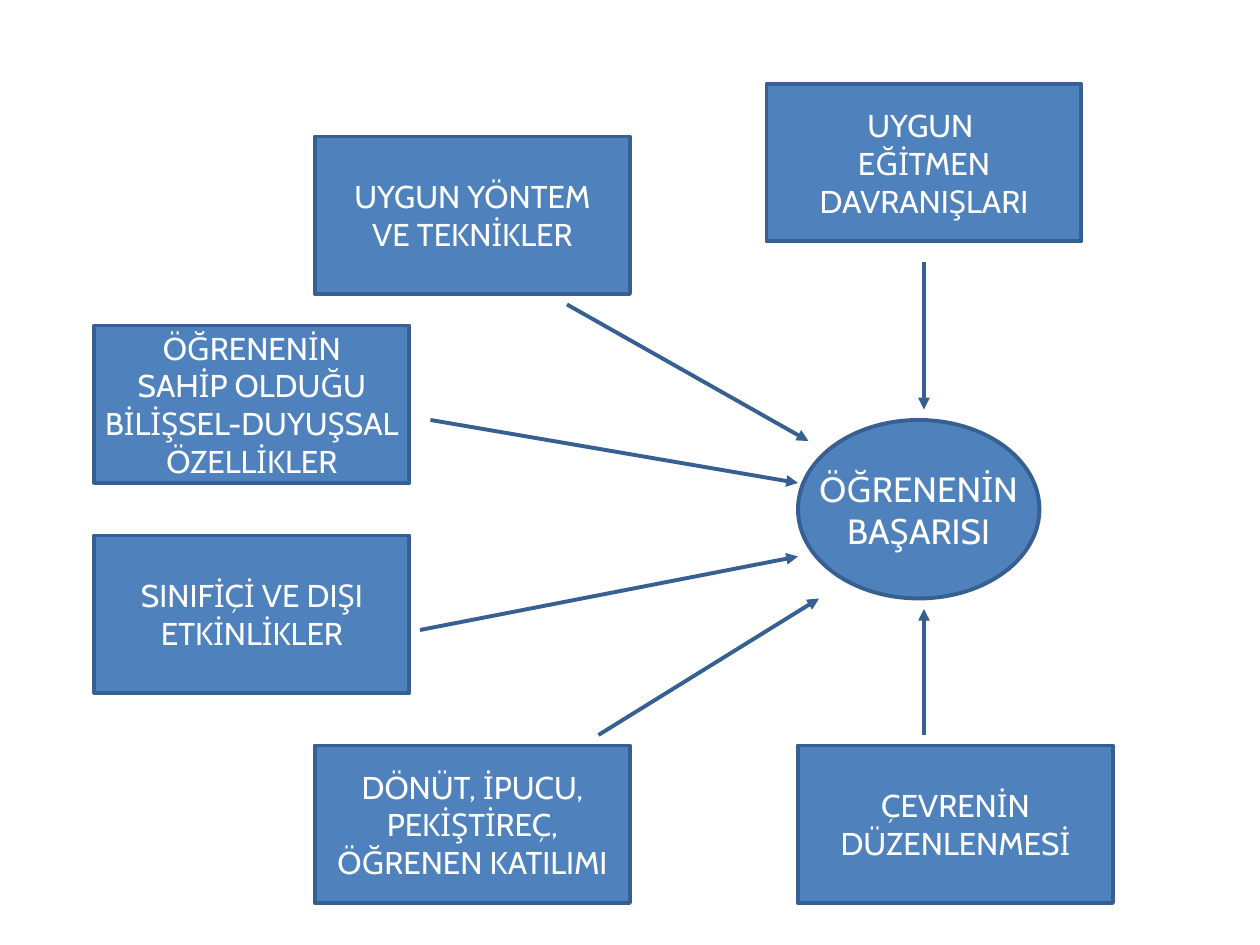
from dataclasses import dataclass

from lxml.etree import SubElement
from pptx import Presentation
from pptx.dml.color import RGBColor
from pptx.enum.shapes import MSO_CONNECTOR, MSO_SHAPE
from pptx.enum.text import MSO_ANCHOR, PP_ALIGN
from pptx.oxml.ns import qn
from pptx.util import Pt


@dataclass(frozen=True)
class Theme:
    fill: RGBColor = RGBColor(0x4F, 0x81, 0xBD)
    line: RGBColor = RGBColor(0x37, 0x60, 0x92)
    text: RGBColor = RGBColor(0xFF, 0xFF, 0xFF)
    font: str = "Cabin"
    factor_size: int = 18
    outcome_size: int = 20
    line_width: float = 2.25


THEME = Theme()
FACTOR_SIZE = (180, 90)

# The outcome: left, top, width, height
OUTCOME_FRAME = (456, 240, 138, 102)
OUTCOME_LINES = ["ÖĞRENENİN", "BAŞARISI"]

# Each factor: box corner, text lines, arrow start, arrow end
FACTORS = [
    ((438, 48), ["UYGUN ", "EĞİTMEN", "DAVRANIŞLARI"], (528, 150), (528, 234)),
    ((180, 78), ["UYGUN YÖNTEM", "VE TEKNİKLER"], (324, 174), (462, 252)),
    ((54, 186), ["ÖĞRENENİN", "SAHİP OLDUĞU", "BİLİŞSEL-DUYUŞSAL", "ÖZELLİKLER"],
     (246, 240), (456, 276)),
    ((54, 306), ["SINIFİÇİ VE DIŞI", "ETKİNLİKLER"], (240, 360), (456, 318)),
    ((456, 426), ["ÇEVRENİN", "DÜZENLENMESİ"], (528, 420), (528, 348)),
    ((180, 426), ["DÖNÜT, İPUCU,", "PEKİŞTİREÇ,", "ÖĞRENEN KATILIMI"],
     (342, 420), (468, 342)),
]


def apply_format(target, values):
    for name, value in values.items():
        setattr(target, name, value)


def format_line(line):
    line.color.rgb = THEME.line
    line.width = Pt(THEME.line_width)


def add_box(slide, kind, frame, lines, size):
    """Add a filled shape with one centred paragraph per text line."""
    box = slide.shapes.add_shape(kind, *map(Pt, frame))
    box.shadow.inherit = False
    box.fill.solid()
    box.fill.fore_color.rgb = THEME.fill
    format_line(box.line)
    text_frame = box.text_frame
    apply_format(text_frame, {"word_wrap": False, "vertical_anchor": MSO_ANCHOR.MIDDLE})
    for index, line in enumerate(lines):
        para = text_frame.add_paragraph() if index else text_frame.paragraphs[0]
        para.alignment = PP_ALIGN.CENTER
        span = para.add_run()
        span.text = line
        apply_format(span.font, {"name": THEME.font, "size": Pt(size)})
        span.font.color.rgb = THEME.text


def add_arrow(slide, start, end):
    arrow = slide.shapes.add_connector(
        MSO_CONNECTOR.STRAIGHT, *map(Pt, (*start, *end)))
    format_line(arrow.line)
    properties = arrow._element.spPr
    SubElement(properties.find(qn("a:ln")), qn("a:tailEnd"), type="triangle")
    SubElement(properties, qn("a:effectLst"))


def main():
    deck = Presentation()
    apply_format(deck, {"slide_width": Pt(720), "slide_height": Pt(540)})
    slide = deck.slides.add_slide(deck.slide_layouts.get_by_name("Blank"))

    # Outcome in the centre of the arrows
    add_box(slide, MSO_SHAPE.OVAL, OUTCOME_FRAME, OUTCOME_LINES, THEME.outcome_size)

    # Factors and their arrows towards the outcome
    for corner, lines, start, end in FACTORS:
        add_box(slide, MSO_SHAPE.RECTANGLE, corner + FACTOR_SIZE, lines,
                THEME.factor_size)
        add_arrow(slide, start, end)

    deck.save("out.pptx")


if __name__ == "__main__":
    main()
